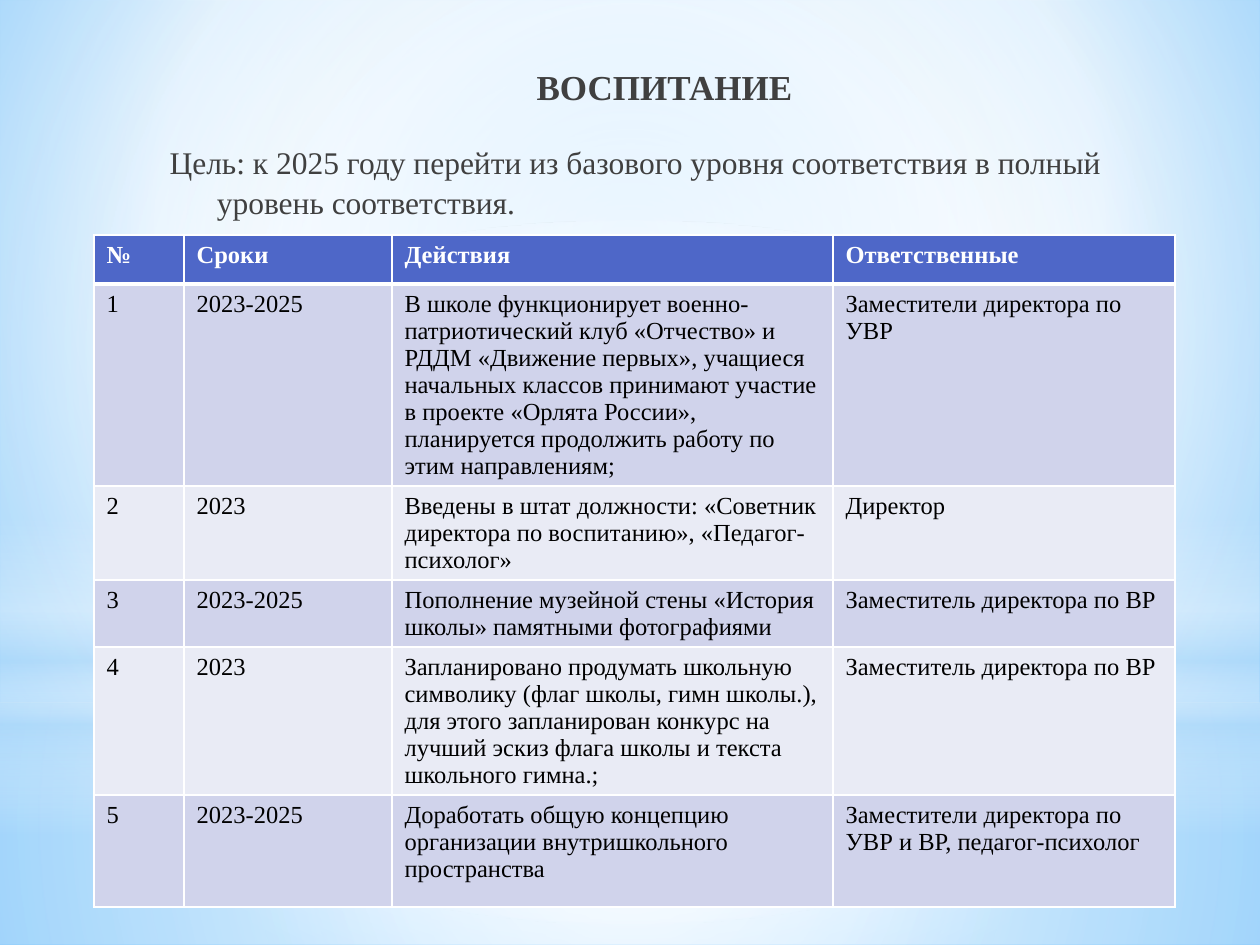
from pptx import Presentation
from pptx.dml.color import RGBColor
from pptx.enum.shapes import MSO_SHAPE
from pptx.enum.text import MSO_ANCHOR, MSO_AUTO_SIZE, PP_ALIGN
from pptx.oxml import parse_xml
from pptx.oxml.ns import nsdecls, qn
from pptx.util import Pt

RECT, OVAL = MSO_SHAPE.RECTANGLE, MSO_SHAPE.OVAL
TOP, MID = MSO_ANCHOR.TOP, MSO_ANCHOR.MIDDLE
LEFT, MIDDLE = PP_ALIGN.LEFT, PP_ALIGN.CENTER
NOFIT = MSO_AUTO_SIZE.NONE

WHITE = RGBColor(0xFF, 0xFF, 0xFF)
BLACK = RGBColor(0, 0, 0)
GREY = RGBColor(0x40, 0x40, 0x40)
HEAD = RGBColor(0x4E, 0x67, 0xC8)
BAND = RGBColor(0xD0, 0xD3, 0xEB)
PALE = RGBColor(0xE9, 0xEB, 0xF5)
SKY = RGBColor(0xB4, 0xDC, 0xFA)
LIGHT = RGBColor(0x9E, 0xD5, 0xFF)
DEEP = RGBColor(0x5B, 0xB9, 0xFF)

# Content
TITLE = "ВОСПИТАНИЕ"
GOAL = ("Цель: к 2025 году перейти из базового уровня соответствия "
        "в полный уровень соответствия.")
ROWS = [
    ("№", "Сроки", "Действия", "Ответственные"),
    ("1", "2023-2025",
     "В школе функционирует военно-патриотический клуб «Отчество» и РДДМ "
     "«Движение первых», учащиеся начальных классов принимают участие в "
     "проекте «Орлята России», планируется продолжить работу по этим "
     "направлениям;", "Заместители директора по УВР"),
    ("2", "2023",
     "Введены в штат должности: «Советник директора по воспитанию», "
     "«Педагог-психолог»", "Директор"),
    ("3", "2023-2025",
     "Пополнение музейной стены «История школы» памятными фотографиями",
     "Заместитель директора по ВР"),
    ("4", "2023",
     "Запланировано продумать школьную символику (флаг школы, гимн школы.), "
     "для этого запланирован конкурс на лучший эскиз флага школы и текста "
     "школьного гимна.;", "Заместитель директора по ВР"),
    ("5", "2023-2025",
     "Доработать общую концепцию организации внутришкольного пространства",
     "Заместители директора по УВР и ВР, педагог-психолог"),
]
COLS = (90, 208, 441, 342)
HIGHS = (49, 202, 94, 67, 148, 112)

# Gradients: stops of (place, colour, opacity), then focus box or angle
MIST = (50, 50, 50, 50)
BACK = ([(0, LIGHT, 100), (60, WHITE, 100), (100, DEEP, 100)],
        (20, 10, 20, 60))
GLOWS = [
    (RECT, (0, 703, 1260, 242),
     [(0, WHITE, 91), (37, WHITE, 76), (100, SKY, 79)], MIST),
    (RECT, (0, 0, 1260, 703),
     [(0, WHITE, 89), (48, WHITE, 62), (100, SKY, 79)], MIST),
    (RECT, (0, 519, 1260, 315),
     [(0, WHITE, 0), (29, WHITE, 30), (45, SKY, 40), (55, WHITE, 26),
      (65, SKY, 60), (100, WHITE, 0)], 90),
    (OVAL, (0, 221, 1260, 703), [(0, WHITE, 100), (56, WHITE, 0)], MIST),
]


def px(n):
    return round(n * 914400 / 126)


def blend(fill, root, stops, aim):
    """Give the fill under root a gradient with opacity."""
    fill.gradient()
    old = next(root.iter(qn("a:gradFill")))
    marks = "".join(
        f'<a:gs pos="{at * 1000}"><a:srgbClr val="{tint}">'
        f'<a:alpha val="{seen * 1000}"/></a:srgbClr></a:gs>'
        for at, tint, seen in stops)
    if isinstance(aim, tuple):
        box = " ".join(f'{s}="{n * 1000}"' for s, n in zip("ltrb", aim))
        way = f'<a:path path="circle"><a:fillToRect {box}/></a:path>'
    else:
        way = f'<a:lin ang="{aim * 60000}" scaled="0"/>'
    new = parse_xml(f'<a:gradFill {nsdecls("a")} rotWithShape="1">'
                    f'<a:gsLst>{marks}</a:gsLst>{way}</a:gradFill>')
    old.getparent().replace(old, new)


def put(item, vals):
    for name, val in vals.items():
        setattr(item, name, val)


def write(frame, text, size, tint, bold=False, **para):
    frame.text = text
    line = frame.paragraphs[0]
    put(line, para)
    font = line.runs[0].font
    put(font, {"name": "Times New Roman", "size": Pt(size), "bold": bold})
    font.color.rgb = tint


def place(shape, box):
    put(shape, dict(zip(("left", "top", "width", "height"), map(px, box))))


def edge(cell, base):
    """Draw white cell borders, with the given bottom width."""
    props = cell._tc.get_or_add_tcPr()
    for i, (side, wide) in enumerate(zip("LRTB", (1, 1, 1, base))):
        props.insert(i, parse_xml(
            f'<a:ln{side} {nsdecls("a")} w="{Pt(wide)}"><a:solidFill>'
            f'<a:srgbClr val="{WHITE}"/></a:solidFill></a:ln{side}>'))


deck = Presentation()
put(deck, {"slide_width": px(1260), "slide_height": px(945)})
slide = deck.slides.add_slide(deck.slide_layouts[1])
title, body = slide.placeholders

# Backdrop, kept behind the text
blend(slide.background.fill, slide._element, *BACK)
for i, (kind, box, stops, aim) in enumerate(GLOWS):
    glow = slide.shapes.add_shape(kind, *map(px, box))
    glow.shadow.inherit = False
    glow.line.fill.background()
    blend(glow.fill, glow._element, stops, aim)
    slide.shapes._spTree.insert(2 + i, glow._element)

# Title and goal
place(title, (247, 65, 835, 49))
place(body, (157, 135, 1028, 714))
for shape, side in ((title, MID), (body, TOP)):
    put(shape.text_frame, {"word_wrap": True, "auto_size": NOFIT,
                           "vertical_anchor": side})
write(title.text_frame, TITLE, 20, GREY, True, alignment=MIDDLE,
      line_spacing=Pt(20.4))
write(body.text_frame, GOAL, 18, GREY, alignment=LEFT, line_spacing=1.05,
      space_before=Pt(0))
props = body.text_frame.paragraphs[0]._p.get_or_add_pPr()
put(props, {"marL": 0, "indent": 0})
props.append(parse_xml(f'<a:buNone {nsdecls("a")}/>'))

# Table
table = slide.shapes.add_table(
    len(ROWS), len(COLS), px(94), px(235), px(sum(COLS)), px(sum(HIGHS))).table
for col, wide in zip(table.columns, COLS):
    col.width = px(wide)
for r, (row, high) in enumerate(zip(ROWS, HIGHS)):
    table.rows[r].height = px(high)
    top = r == 0
    for c, text in enumerate(row):
        cell = table.cell(r, c)
        cell.fill.solid()
        cell.fill.fore_color.rgb = HEAD if top else (PALE, BAND)[r % 2]
        write(cell.text_frame, text, 14, WHITE if top else BLACK, top)
        edge(cell, 3 if top else 1)

deck.save("out.pptx")
